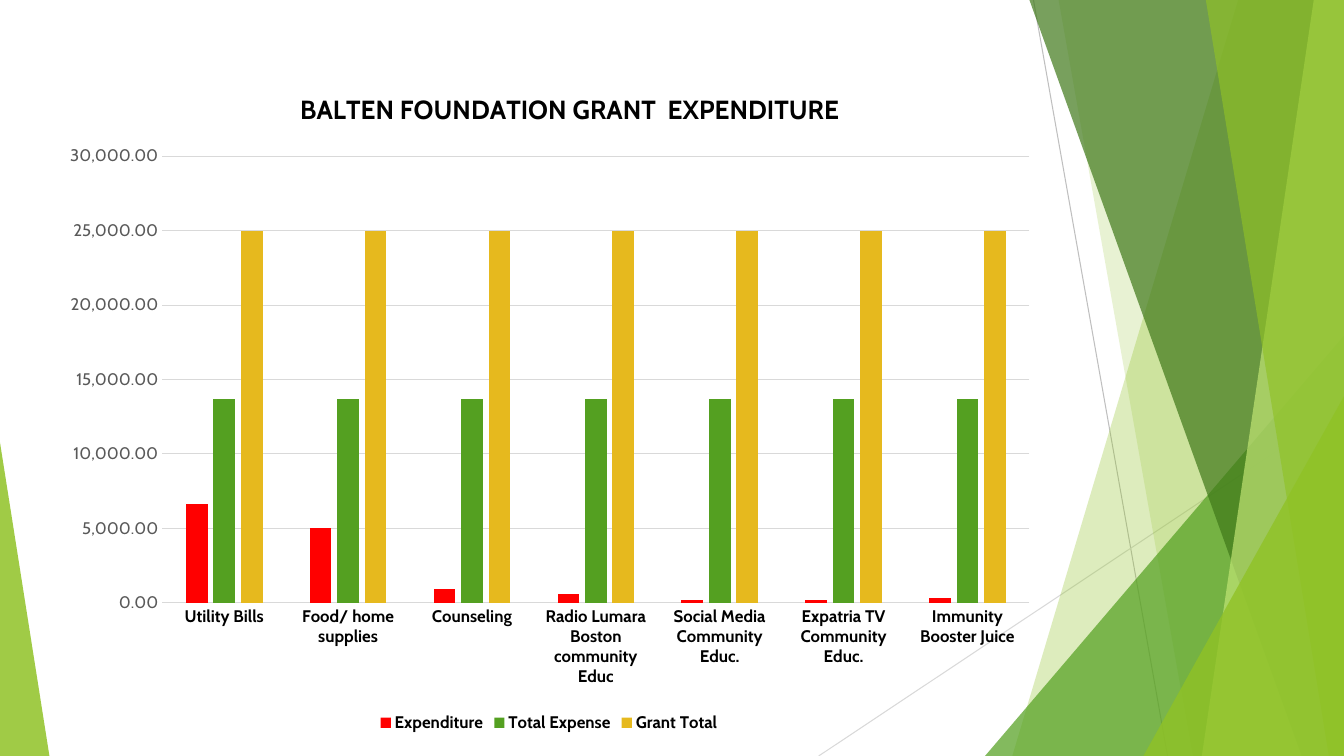
from lxml import etree
from pptx import Presentation
from pptx.chart.data import CategoryChartData
from pptx.dml.color import RGBColor
from pptx.enum.chart import XL_CHART_TYPE as CHART, XL_LEGEND_POSITION as LEGEND, XL_TICK_MARK as TICK
from pptx.enum.shapes import MSO_CONNECTOR as CONNECTOR, MSO_SHAPE as SHAPE
from pptx.oxml import parse_xml
from pptx.oxml.ns import nsdecls, qn
from pptx.util import Pt

PX = 9144  # 100 px to the inch
W, H = 1333, 750
FONT = "Cabin"
COLORS = {
    "lime": "90C226", "green": "54A021", "forest": "3F7819", "pale": "C0E474",
    "red": "FF0000", "gold": "E6B91E", "black": "000000", "grey": "595959",
    "rule": "BFBFBF", "grid": "D9D9D9",
}
CATEGORIES = [
    "Utility Bills", "Food/ home supplies", "Counseling",
    "Radio Lumara Boston community Educ", "Social Media Community Educ.",
    "Expatria TV Community Educ.", "Immunity Booster Juice",
]
SERIES = [
    ("Expenditure", [6600, 5000, 900, 600, 200, 200, 300], "red"),
    ("Total Expense", [13700] * 7, "green"),
    ("Grant Total", [25000] * 7, "gold"),
]


def rgb(name):
    return RGBColor.from_string(COLORS[name])


def paint(s, color, opacity):
    """Fill a shape with a see-through colour and no outline."""
    s.shadow.inherit = False
    s.fill.solid()
    s.fill.fore_color.rgb = rgb(color)
    s.line.fill.background()
    clr = s.fill._xPr.find(qn("a:solidFill"))[0]
    etree.SubElement(clr, qn("a:alpha")).set("val", str(opacity * 1000))


def add_rule(slide, x1, y1, x2, y2, color):
    s = slide.shapes.add_connector(
        CONNECTOR.STRAIGHT, x1 * PX, y1 * PX, x2 * PX, y2 * PX)
    s.line.color.rgb = rgb(color)
    s.line.width = Pt(0.75)
    etree.SubElement(s._element.spPr, qn("a:effectLst"))


def add_band(slide, top, bottom, color, opacity):
    """Draw a full-height band from a slanted left edge to the slide's right edge."""
    builder = slide.shapes.build_freeform(top, 0, scale=PX)
    builder.add_line_segments([(W, 0), (W, H), (bottom, H)], close=True)
    paint(builder.convert_to_shape(), color, opacity)


def add_wedge(slide, x, y, w, apex, color, opacity):
    """Draw a triangle that stands on the bottom edge of the slide."""
    s = slide.shapes.add_shape(
        SHAPE.ISOSCELES_TRIANGLE, x * PX, y * PX, w * PX, (H - y) * PX)
    s.adjustments[0] = apex
    paint(s, color, opacity)


def add_facets(slide):
    add_rule(slide, 1025, 0, 1158, H, "rule")
    add_rule(slide, W, 403, 812, H, "grid")
    add_band(slide, 1228, 1004, "lime", 30)
    add_band(slide, 1050, 1183, "lime", 20)
    add_wedge(slide, 977, 333, W - 977, 1, "green", 72)
    add_band(slide, 1021, 1291, "forest", 70)
    add_band(slide, 1303, 1192, "pale", 70)
    add_band(slide, 1196, 1318, "lime", 65)
    add_wedge(slide, 1134, 393, W - 1134, 1, "lime", 80)
    add_wedge(slide, 0, 439, 49, 0, "lime", 85)


def set_font(font, size, color, bold=False):
    font.name = FONT
    font.size = Pt(size)
    font.bold = bold
    font.color.rgb = rgb(color)


def place(element, before, **fractions):
    """Fix a chart part at fractions of the chart's size."""
    for old in element.findall(qn("c:layout")):
        element.remove(old)
    modes = '<c:xMode val="edge"/><c:yMode val="edge"/>'
    target = '<c:layoutTarget val="inner"/>' if "w" in fractions else ""
    values = "".join(f'<c:{k} val="{v}"/>' for k, v in fractions.items())
    before.addprevious(parse_xml(
        f'<c:layout {nsdecls("c")}><c:manualLayout>{target}{modes}{values}'
        "</c:manualLayout></c:layout>"))


def style_axes(chart):
    cat, val = chart.category_axis, chart.value_axis
    for axis in (cat, val):
        axis.major_tick_mark = axis.minor_tick_mark = TICK.NONE
    set_font(cat.tick_labels.font, 12, "black", True)
    set_font(val.tick_labels.font, 12, "grey")
    val.minimum_scale, val.maximum_scale, val.major_unit = 0, 30000, 5000
    val.tick_labels.number_format = "#,##0.00"
    val.tick_labels.number_format_is_linked = False
    val.format.line.fill.background()
    for line in (cat.format.line, val.major_gridlines.format.line):
        line.color.rgb = rgb("grid")
        line.width = Pt(0.75)


def add_grant_chart(slide, x, y, w, h):
    data = CategoryChartData(number_format="#,##0.00")
    data.categories = CATEGORIES
    for name, values, _ in SERIES:
        data.add_series(name, values)
    chart = slide.shapes.add_chart(
        CHART.COLUMN_CLUSTERED, x * PX, y * PX, w * PX, h * PX, data).chart
    set_font(chart.font, 10, "black")
    chart._chartSpace.find(qn("c:chart")).addnext(parse_xml(
        f'<c:spPr {nsdecls("c", "a")}><a:noFill/><a:ln><a:noFill/></a:ln></c:spPr>'))

    title = chart.chart_title
    p = title.text_frame.paragraphs[0]
    p.text = "BALTEN FOUNDATION GRANT  EXPENDITURE"
    set_font(p.runs[0].font, 18.7, "black", True)
    title.include_in_layout = False
    place(title._element, title._element.find(qn("c:overlay")), x=244 / w, y=13 / h)

    plot = chart.plots[0]
    plot.gap_width, plot.overlap = 219, -27
    plot.vary_by_categories = False
    for series, (_, _, color) in zip(plot.series, SERIES):
        series.format.fill.solid()
        series.format.fill.fore_color.rgb = rgb(color)
    style_axes(chart)
    place(plot._element.getparent(), plot._element,
          x=112 / w, y=82 / h, w=860 / w, h=443 / h)

    chart.has_legend = True
    chart.legend.position = LEGEND.BOTTOM
    chart.legend.include_in_layout = False
    set_font(chart.legend.font, 12, "black", True)


def main():
    prs = Presentation()
    prs.slide_width, prs.slide_height = W * PX, H * PX
    slide = prs.slides.add_slide(prs.slide_layouts[6])
    add_facets(slide)
    add_grant_chart(slide, 49, 73, 991, 658)
    prs.save("out.pptx")


if __name__ == "__main__":
    main()
